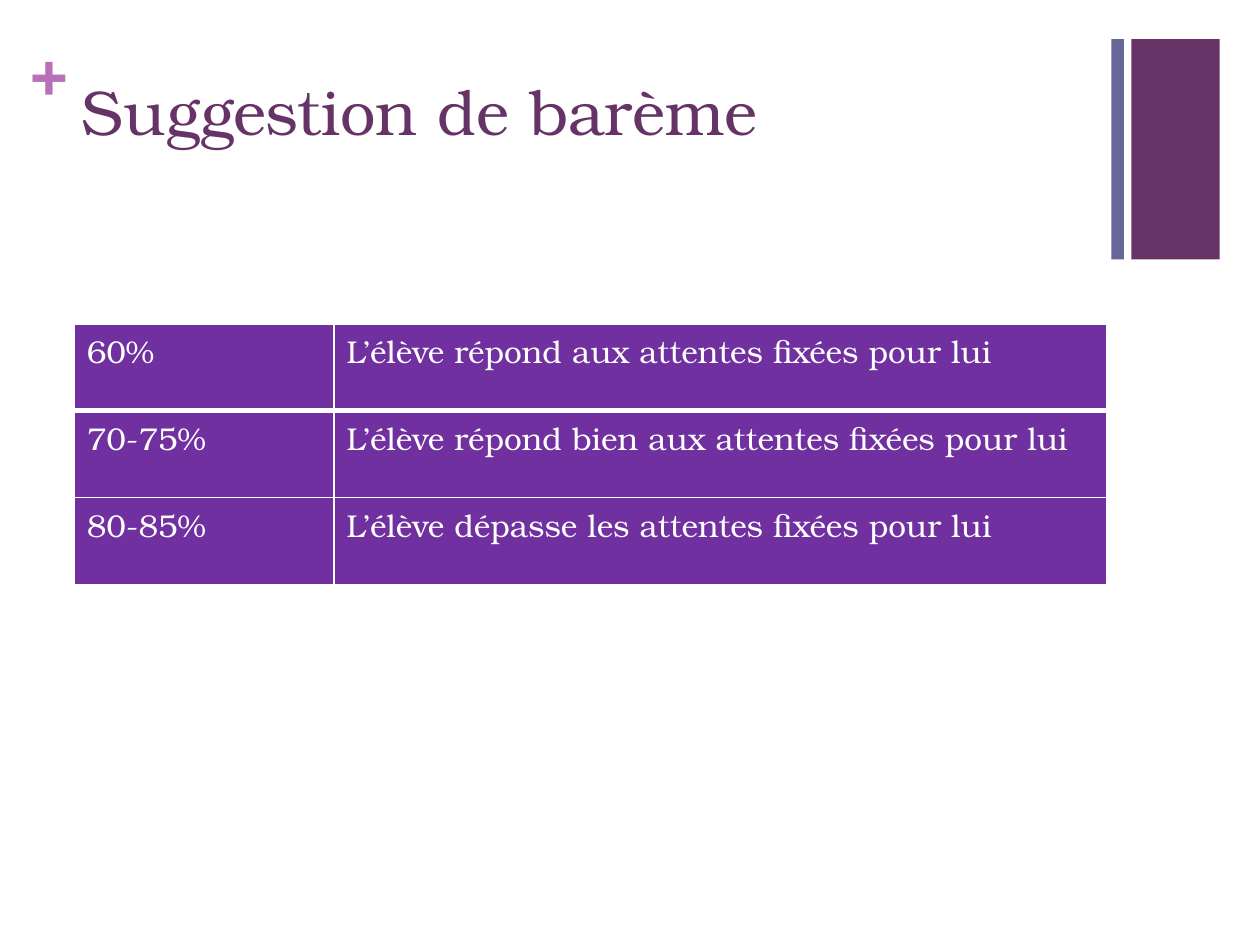
from lxml.etree import SubElement as Sub
from pptx import Presentation as Deck
from pptx.dml.color import RGBColor as Rgb
from pptx.enum.shapes import MSO_SHAPE as Kind
from pptx.oxml.ns import qn
from pptx.util import Inches, Pt


def tint(code):
    return Rgb.from_string(code)


def write(frame, text, size=18, color="FFFFFF", bold=False, font="TeX Gyre Bonum"):
    run = frame.paragraphs[0].add_run()
    run.text = text
    run.font.name = font
    run.font.size = Pt(size)
    run.font.bold = bold
    run.font.color.rgb = tint(color)


class Page:
    """Draws styled elements on the current slide."""

    plum, slate, pink, grape, white = "663366", "666699", "B870B8", "7030A0", "FFFFFF"

    def __init__(self, slide):
        self.slide = slide

    def bar(self, left, top, width, height, color):
        shape = self.slide.shapes.add_shape(Kind.RECTANGLE, *map(Inches, (left, top, width, height)))
        shape.shadow.inherit = False
        shape.fill.solid()
        shape.fill.fore_color.rgb = tint(color)
        shape.line.fill.background()

    def label(self, left, top, width, height, text, inset=(0.1, 0.05), **style):
        frame = self.slide.shapes.add_textbox(*map(Inches, (left, top, width, height))).text_frame
        frame.word_wrap = True
        frame.margin_left = frame.margin_right = Inches(inset[0])
        frame.margin_top = frame.margin_bottom = Inches(inset[1])
        write(frame, text, **style)

    def edge(self, cell, side, width):
        line = Sub(cell._tc.get_or_add_tcPr(), qn(f"a:ln{side}"), w=str(Pt(width)))
        Sub(Sub(line, qn("a:solidFill")), qn("a:srgbClr"), val=self.white)

    def grid(self, left, top, widths, height, rows):
        size = (left, top, sum(widths), height * len(rows))
        table = self.slide.shapes.add_table(len(rows), len(widths), *map(Inches, size)).table
        for col, width in zip(table.columns, widths):
            col.width = Inches(width)
        for i, row in enumerate(rows):
            table.rows[i].height = Inches(height)
            for j, text in enumerate(row):
                cell = table.cell(i, j)
                thick = {"T": 3 if i == 1 else 1, "B": 3 if i == 0 else 1}
                for side in "LRTB":
                    self.edge(cell, side, thick.get(side, 1))
                cell.fill.solid()
                cell.fill.fore_color.rgb = tint(self.grape)
                write(cell.text_frame, text)


def main():
    deck = Deck()
    deck.slide_width, deck.slide_height = Inches(10), Inches(7.5)
    page = Page(deck.slides.add_slide(deck.slide_layouts[6]))
    page.bar(8.98, 0.31, 0.7, 1.75, page.plum)
    page.label(0.24, 0.25, 0.29, 0.61, "+", inset=(0, 0), size=36, color=page.pink, bold=True)
    page.bar(8.82, 0.31, 0.1, 1.75, page.slate)
    page.label(0.55, 0.53, 8.26, 1.22, "Suggestion de barème", size=36, color=page.plum)
    page.grid(0.59, 2.57, (2.06, 6.13), 0.69, [
        ("60%", "L’élève répond aux attentes fixées pour lui"),
        ("70-75%", "L’élève répond bien aux attentes fixées pour lui"),
        ("80-85%", "L’élève dépasse les attentes fixées pour lui"),
    ])
    deck.save("out.pptx")


if __name__ == "__main__":
    main()
